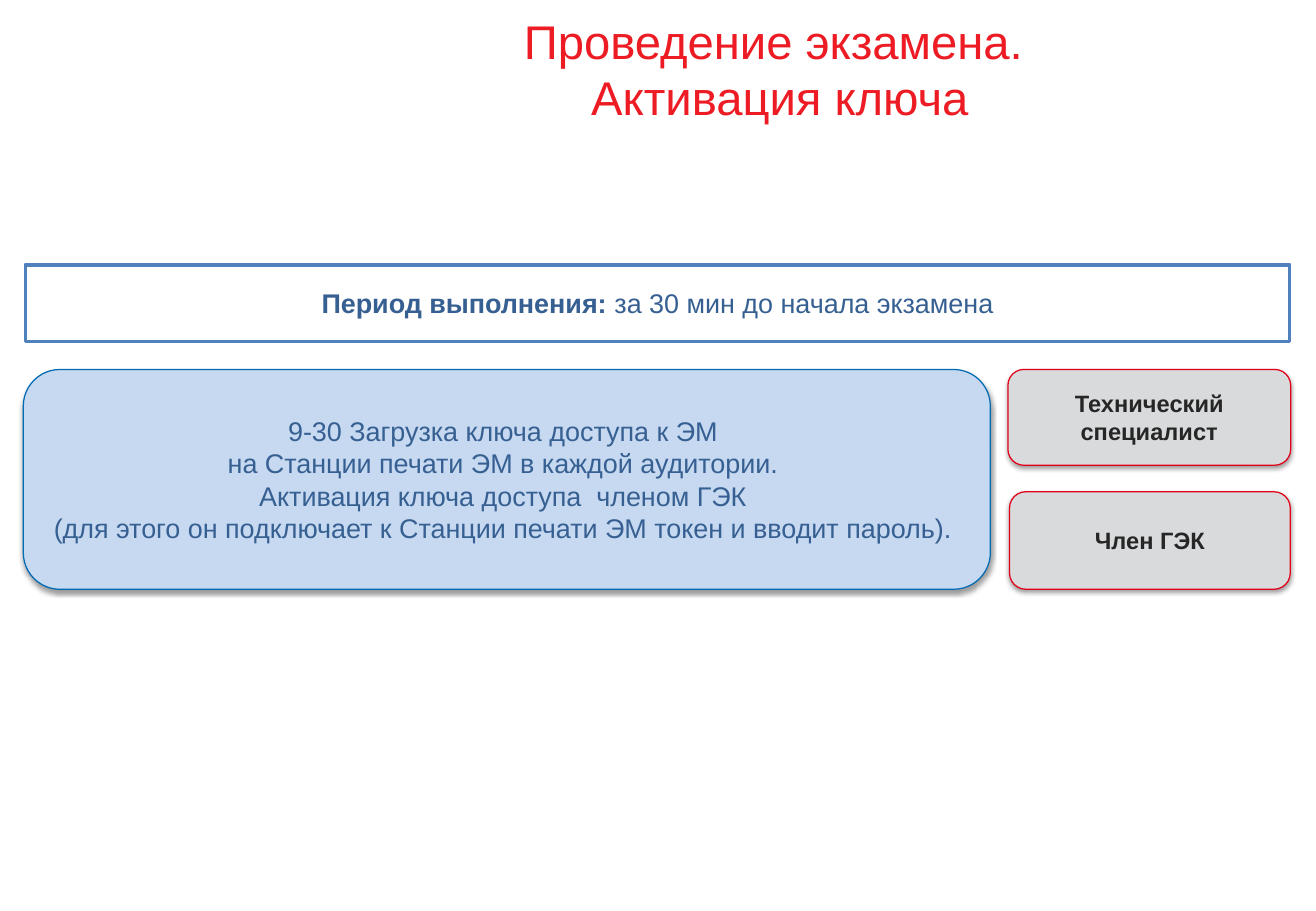
from lxml import etree
from pptx import Presentation
from pptx.dml.color import RGBColor
from pptx.enum.shapes import MSO_SHAPE
from pptx.enum.text import MSO_ANCHOR, PP_ALIGN
from pptx.oxml.ns import qn
from pptx.util import Pt

RECTANGLE = MSO_SHAPE.RECTANGLE
ROUNDED = MSO_SHAPE.ROUNDED_RECTANGLE
MIDDLE = MSO_ANCHOR.MIDDLE
CENTER = PP_ALIGN.CENTER
BLANK_LAYOUT = 6
FONT = "Arial"
TEXT_BLUE = "376092"


def color(value):
    """Turn a hex string into a colour."""
    return RGBColor.from_string(value)


def style_run(run, size, text_color, bold):
    """Set the font of one run."""
    run.font.name = FONT
    run.font.size = Pt(size)
    run.font.bold = bold
    run.font.color.rgb = color(text_color)


def write_text(shape, paragraphs, size, text_color, bold=False):
    """Fill a shape with centred paragraphs in one text style."""
    frame = shape.text_frame
    frame.text = "\n".join(paragraphs)
    frame.word_wrap = True
    frame.vertical_anchor = MIDDLE
    frame.margin_left = frame.margin_right = Pt(8.5)
    frame.margin_top = frame.margin_bottom = Pt(4.25)
    for paragraph in frame.paragraphs:
        paragraph.alignment = CENTER
        for run in paragraph.runs:
            style_run(run, size, text_color, bold)


def add_shadow(shape):
    """Give a shape a soft shadow below it."""
    effects = shape._element.spPr.find(qn("a:effectLst"))
    shadow = etree.SubElement(
        effects, qn("a:outerShdw"), blurRad=str(Pt(3.1)), dist=str(Pt(1.6)),
        dir="5400000", algn="ctr", rotWithShape="0")
    black = etree.SubElement(shadow, qn("a:srgbClr"), val="000000")
    etree.SubElement(black, qn("a:alpha"), val="38000")


def add_panel(slide, box, kind, fill, line, line_width):
    """Draw a filled and outlined shape in the given box."""
    shape = slide.shapes.add_shape(kind, *map(Pt, box))
    shape.shadow.inherit = False
    shape.fill.solid()
    shape.fill.fore_color.rgb = color(fill)
    shape.line.color.rgb = color(line)
    shape.line.width = Pt(line_width)
    return shape


def add_title(slide, box, title):
    """Place the slide title in the given box."""
    shape = slide.shapes.add_textbox(*map(Pt, box))
    write_text(shape, [title], 28, "ED1C24")


def add_period(slide, box, label, period):
    """Place the framed period line with its bold label."""
    shape = add_panel(slide, box, RECTANGLE, "FFFFFF", "4F81BD", 2)
    write_text(shape, [label], 16, TEXT_BLUE, bold=True)
    period_run = shape.text_frame.paragraphs[0].add_run()
    period_run.text = period
    style_run(period_run, 16, TEXT_BLUE, False)


def add_role(slide, box, role):
    """Place a grey card naming a responsible person."""
    shape = add_panel(slide, box, ROUNDED, "D9DADB", "E2001A", 0.75)
    add_shadow(shape)
    write_text(shape, [role], 14, "262626", bold=True)


def add_step(slide, box, paragraphs):
    """Place the blue card describing the step."""
    shape = add_panel(slide, box, ROUNDED, "C6D9F1", "006AB3", 0.75)
    add_shadow(shape)
    write_text(shape, paragraphs, 16, TEXT_BLUE)


def main():
    """Build the slide and save it."""
    presentation = Presentation()
    presentation.slide_width = Pt(780)
    presentation.slide_height = Pt(540)
    slide = presentation.slides.add_slide(presentation.slide_layouts[BLANK_LAYOUT])
    add_title(slide, (147.6, -1.4, 629.3, 84.2), "Проведение экзамена. \vАктивация ключа")
    add_period(slide, (15, 157, 749.5, 45.4),
               "Период выполнения: ", "за 30 мин до начала экзамена")
    add_role(slide, (597.4, 219, 167.6, 56.8), "Технический специалист")
    add_role(slide, (598.4, 291.5, 166.4, 57.8), "Член ГЭК")
    add_step(slide, (13.8, 219, 573.2, 130.3), [
        "9-30 Загрузка ключа доступа к ЭМ \vна Станции печати ЭМ в каждой аудитории. ",
        "Активация ключа доступа  членом ГЭК \v"
        "(для этого он подключает к Станции печати ЭМ токен и вводит пароль). ",
    ])
    presentation.save("out.pptx")


if __name__ == "__main__":
    main()
